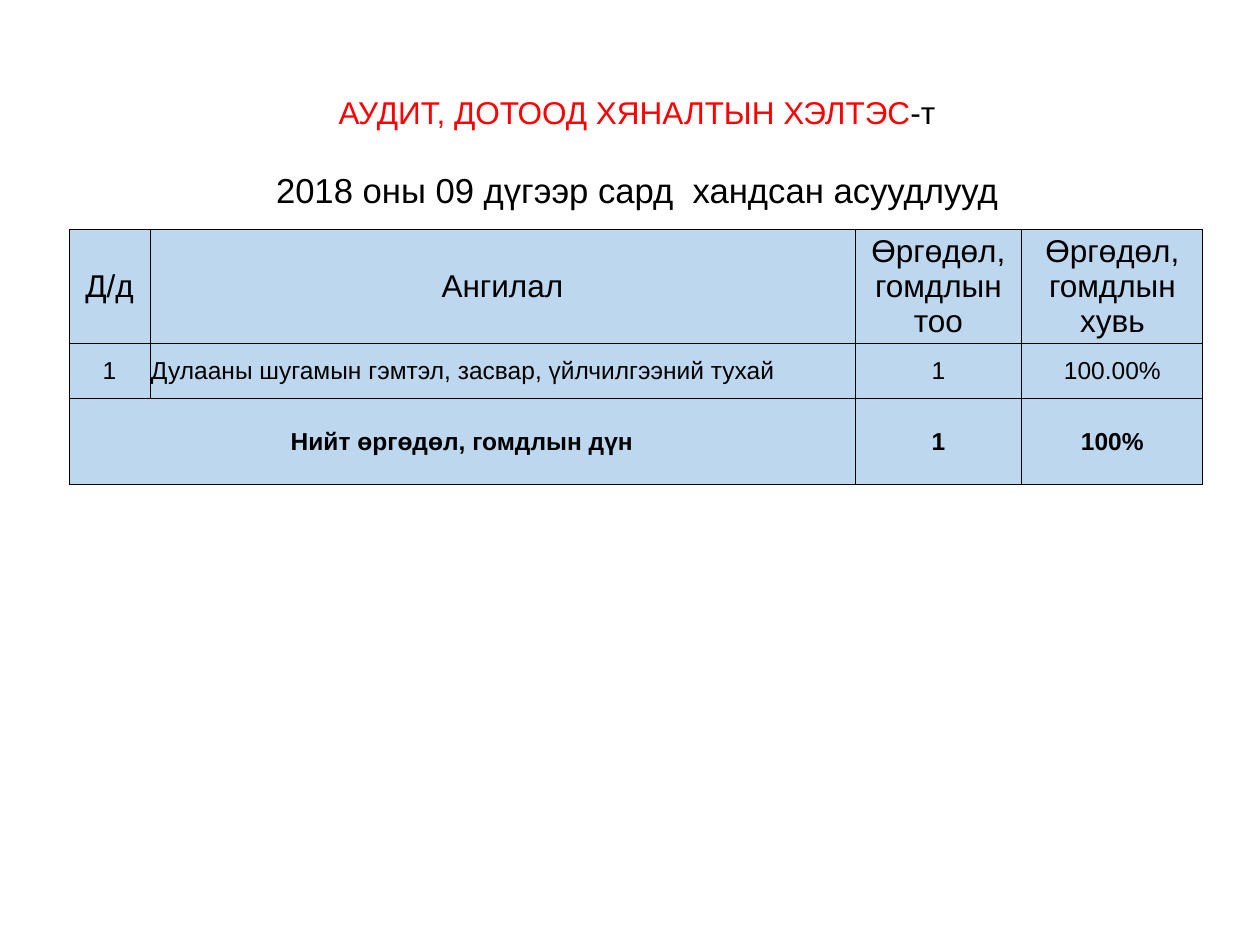
from lxml import etree
from pptx import Presentation
from pptx import util as u
from pptx.dml.color import RGBColor
from pptx.enum import text
from pptx.oxml.ns import qn

PX = 914400 / 126
FONT = "Arial"
COLORS = {"ink": "000000", "accent": "FF0000", "cell": "BDD7EE"}
CENTER, LEFT = text.PP_ALIGN.CENTER, text.PP_ALIGN.LEFT


def px(n):
    return u.Emu(round(n * PX))


def add_run(paragraph, words, size, color="ink", bold=False):
    run = paragraph.add_run()
    run.text = words
    run.font.name = FONT
    run.font.size = u.Pt(size)
    run.font.bold = bold
    run.font.color.rgb = RGBColor.from_string(COLORS[color])


def add_heading(slide, left, top, width, height):
    frame = slide.shapes.add_textbox(px(left), px(top), px(width), px(height)).text_frame
    frame.word_wrap = True
    frame.vertical_anchor = text.MSO_ANCHOR.MIDDLE

    # Department
    department = frame.paragraphs[0]
    department.alignment = CENTER
    department.space_after = px(38)
    add_run(department, "АУДИТ, ДОТООД ХЯНАЛТЫН ХЭЛТЭС", 18, "accent")
    add_run(department, "-т", 18)

    # Reporting month
    month = frame.add_paragraph()
    month.alignment = CENTER
    add_run(month, "2018 оны 09 дүгээр сард  хандсан асуудлууд", 19.8)


def add_borders(cell):
    properties = cell._tc.get_or_add_tcPr()
    for side in ("lnL", "lnR", "lnT", "lnB"):
        line = etree.SubElement(properties, qn("a:" + side), w=str(u.Pt(0.5)))
        fill = etree.SubElement(line, qn("a:solidFill"))
        etree.SubElement(fill, qn("a:srgbClr"), val=COLORS["ink"])


def fill_cell(cell, words, size, bold, align):
    add_borders(cell)
    cell.fill.solid()
    cell.fill.fore_color.rgb = RGBColor.from_string(COLORS["cell"])
    cell.margin_left = cell.margin_right = cell.margin_top = px(1)
    cell.margin_bottom = 0
    cell.vertical_anchor = text.MSO_ANCHOR.MIDDLE
    paragraph = cell.text_frame.paragraphs[0]
    paragraph.alignment = align
    if words:
        add_run(paragraph, words, size, bold=bold)


def add_complaints(slide, left, top):
    widths = [81, 705, 167, 181]
    # Height, text size, bold, words
    rows = [
        (105, 18, False, ["Д/д", "Ангилал", "Өргөдөл, гомдлын тоо", "Өргөдөл, гомдлын хувь"]),
        (55, 14, False, ["1", "Дулааны шугамын гэмтэл, засвар, үйлчилгээний тухай", "1", "100.00%"]),
        (86, 14, True, ["Нийт өргөдөл, гомдлын дүн", "", "1", "100%"]),
    ]
    table = slide.shapes.add_table(
        len(rows), len(widths), px(left), px(top),
        px(sum(widths)), px(sum(row[0] for row in rows))).table
    for column, width in zip(table.columns, widths):
        column.width = px(width)
    for r, (height, size, bold, words) in enumerate(rows):
        table.rows[r].height = px(height)
        for c, entry in enumerate(words):
            align = LEFT if (r, c) == (1, 1) else CENTER
            fill_cell(table.cell(r, c), entry, size, bold, align)

    # Total label spans number and category
    table.cell(2, 0).merge(table.cell(2, 1))


def main():
    deck = Presentation()
    deck.slide_width, deck.slide_height = px(1260), px(945)
    slide = deck.slides.add_slide(deck.slide_layouts[6])
    add_heading(slide, 72, 111, 1130, 82)
    add_complaints(slide, 69, 229)
    deck.save("out.pptx")


if __name__ == "__main__":
    main()
